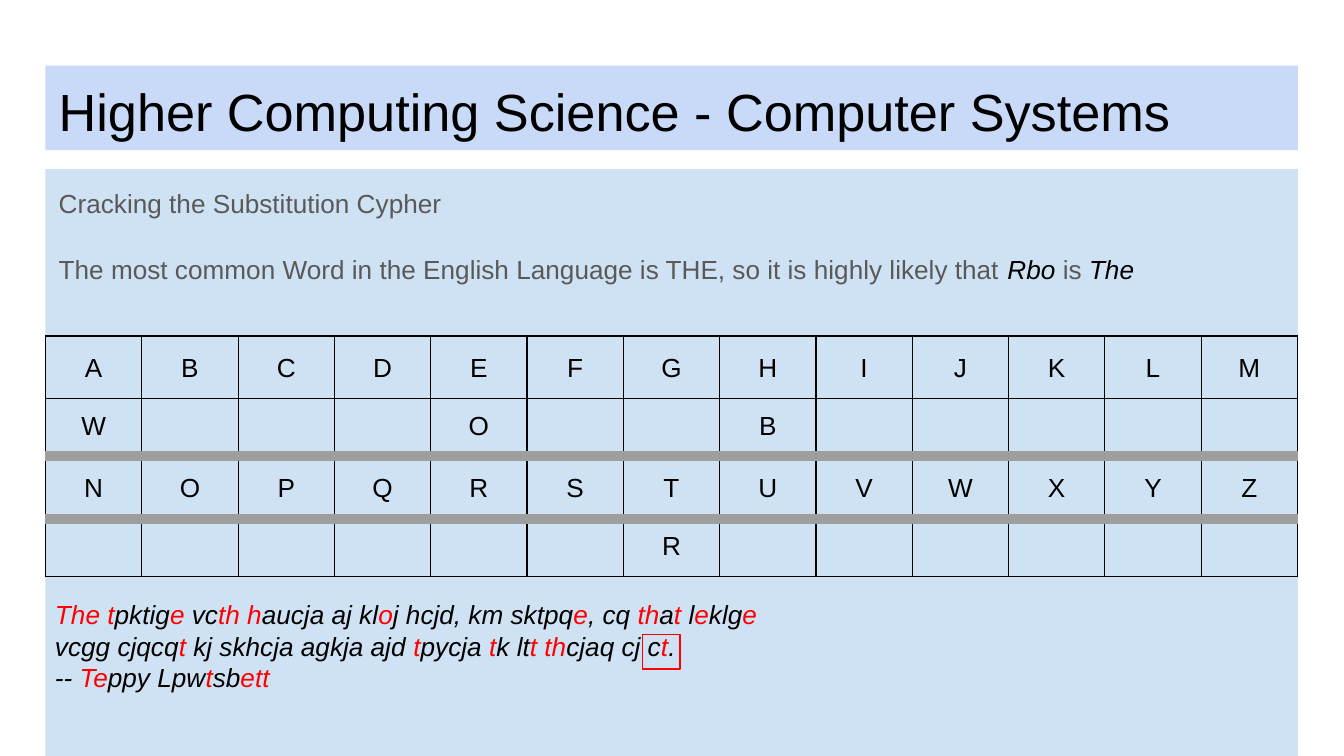
"""Build a slide on cracking a substitution cypher with letter frequencies."""
from lxml import etree
from pptx import Presentation
from pptx import util as u
from pptx.dml.color import RGBColor
from pptx.enum import shapes, text
from pptx.oxml.ns import qn

BLACK = RGBColor(0x00, 0x00, 0x00)
RED = RGBColor(0xFF, 0x00, 0x00)
SLATE = RGBColor(0x59, 0x59, 0x59)
GREY = RGBColor(0x9E, 0x9E, 0x9E)
TITLE_BLUE = RGBColor(0xC9, 0xDA, 0xF8)
BODY_BLUE = RGBColor(0xCF, 0xE2, 0xF3)

TITLE = ["Higher Computing Science - Computer Systems"]
LESSON = [
    "Cracking the Substitution Cypher",
    "The most common Word in the English Language is THE, "
    "so it is highly likely that |Rbo |is |The",
]
CYPHERTEXT = [
    "|The t|pktig|e| vc|th h|aucja aj kl|o|j hcjd, km sktpq|e|, cq |th|a|t| l|e|klg|e",
    "vcgg cjqcq|t| kj skhcja agkja ajd |t|pycja |t|k lt|t th|cjaq cj c|t|.",
    "-- |Te|ppy Lpw|t|sb|ett",
]
ALPHABET = ["ABCDEFGHIJKLM", "NOPQRSTUVWXYZ"]
SOLVED = {"A": "W", "E": "O", "H": "B", "T": "R"}

LEFT, WIDTH = 0.86, 23.67
INSET, ROW_HEIGHT = 0.25, 1.09
THIN, THICK = (BLACK, 0.75), (GREY, 6)

BODY_FONT = {"name": "Arial", "size": u.Pt(14)}
TITLE_STYLES = [{"name": "Arial", "size": u.Pt(28), "color": BLACK}]
LESSON_STYLES = [BODY_FONT | {"color": SLATE}, BODY_FONT | {"color": BLACK, "italic": True}]
CYPHER_STYLES = [BODY_FONT | {"color": c, "italic": True} for c in (BLACK, RED)]
LETTER_STYLES = [BODY_FONT | {"color": BLACK}]


def write(frame, lines, styles, **spacing):
    """Write lines whose parts, split at bars, alternate between the styles."""
    for i, line in enumerate(lines):
        paragraph = frame.add_paragraph() if i else frame.paragraphs[0]
        layout = dict(spacing)
        if i == 0:
            layout.pop("space_before", None)
        for key, value in layout.items():
            setattr(paragraph, key, value)
        for n, part in enumerate(line.split("|")):
            if not part:
                continue
            run = paragraph.add_run()
            run.text = part
            for key, value in styles[n % len(styles)].items():
                if key == "color":
                    run.font.color.rgb = value
                else:
                    setattr(run.font, key, value)


def set_up(frame):
    """Give a text frame its insets, wrapping and anchor."""
    for side in ("left", "right", "top", "bottom"):
        setattr(frame, f"margin_{side}", u.Cm(INSET))
    frame.word_wrap = True
    frame.vertical_anchor = text.MSO_ANCHOR.TOP
    return frame


def add_panel(slide, top, height, fill):
    """Add a filled, borderless panel and return its text frame."""
    panel = slide.shapes.add_shape(
        shapes.MSO_SHAPE.RECTANGLE, u.Cm(LEFT), u.Cm(top), u.Cm(WIDTH), u.Cm(height))
    panel.shadow.inherit = False
    panel.fill.solid()
    panel.fill.fore_color.rgb = fill
    panel.line.fill.background()
    return set_up(panel.text_frame)


def add_borders(cell, top, bottom):
    """Draw the four borders of a table cell."""
    properties = cell._tc.get_or_add_tcPr()
    for i, (side, (color, points)) in enumerate(zip("LRTB", (THIN, THIN, top, bottom))):
        line = etree.Element(qn(f"a:ln{side}"), w=str(u.Pt(points)))
        fill = etree.SubElement(line, qn("a:solidFill"))
        etree.SubElement(fill, qn("a:srgbClr"), val=str(color))
        properties.insert(i, line)


def add_key(slide):
    """Add the table that pairs each letter with its cypher letter."""
    rows = []
    for letters in ALPHABET:
        rows += [list(letters), [SOLVED.get(letter, "") for letter in letters]]
    columns = len(rows[0])
    key = slide.shapes.add_table(
        len(rows), columns, u.Cm(LEFT), u.Cm(6.35),
        u.Cm(WIDTH), u.Cm(ROW_HEIGHT * len(rows))).table
    key.first_row = key.horz_banding = False
    for column in key.columns:
        column.width = u.Cm(WIDTH / columns)
    edges = [THIN, THIN, THICK, THICK, THIN]
    for r, letters in enumerate(rows):
        for c, letter in enumerate(letters):
            cell = key.cell(r, c)
            cell.fill.background()
            add_borders(cell, edges[r], edges[r + 1])
            for side in ("left", "right", "top", "bottom"):
                setattr(cell, f"margin_{side}", u.Cm(INSET))
            write(cell.text_frame, [letter], LETTER_STYLES,
                  alignment=text.PP_ALIGN.CENTER, line_spacing=1 if r % 2 else 1.15)
            if not letter:
                paragraph = cell.text_frame.paragraphs[0]
                paragraph._p.get_or_add_endParaRPr().set("sz", "1400")


def main():
    """Assemble and save the slide."""
    deck = Presentation()
    deck.slide_width, deck.slide_height = u.Cm(25.4), u.Cm(14.29)
    slide = deck.slides.add_slide(deck.slide_layouts[6])

    left = text.PP_ALIGN.LEFT
    write(add_panel(slide, 1.24, 1.6, TITLE_BLUE), TITLE, TITLE_STYLES, alignment=left)
    write(add_panel(slide, 3.2, 11.35, BODY_BLUE), LESSON, LESSON_STYLES,
          alignment=left, line_spacing=1.15, space_before=u.Pt(16))

    cyphertext = slide.shapes.add_textbox(u.Cm(0.79), u.Cm(11.07), u.Cm(23.32), u.Cm(2))
    write(set_up(cyphertext.text_frame), CYPHERTEXT, CYPHER_STYLES)
    add_key(slide)

    highlight = slide.shapes.add_shape(
        shapes.MSO_SHAPE.RECTANGLE, u.Cm(12.14), u.Cm(11.99), u.Cm(0.71), u.Cm(0.66))
    highlight.shadow.inherit = False
    highlight.fill.background()
    highlight.line.color.rgb = RED
    highlight.line.width = u.Pt(0.75)

    deck.save("out.pptx")


if __name__ == "__main__":
    main()
